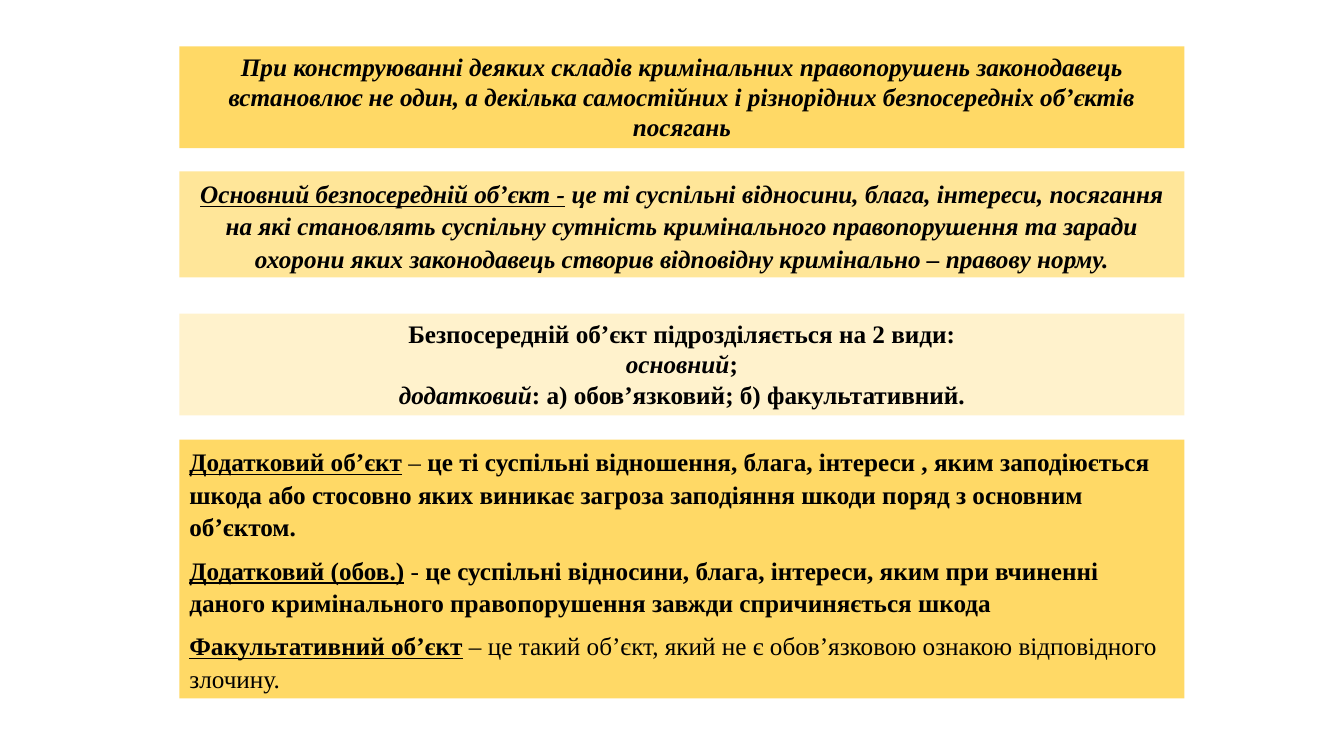
from dataclasses import dataclass

from pptx import Presentation
from pptx.dml.color import RGBColor
from pptx.enum.shapes import MSO_SHAPE
from pptx.enum.text import MSO_ANCHOR, MSO_AUTO_SIZE, PP_ALIGN
from pptx.slide import Slide
from pptx.util import Pt

COLORS = {
    "gold": "FFD966",
    "light_gold": "FFE699",
    "cream": "FFF2CC",
    "text": "000000",
}
FONT_NAME = "Times New Roman"
FONT_SIZE = 18
PANEL_LEFT = 128.2
PANEL_WIDTH = 717.8


@dataclass(frozen=True)
class Span:
    text: str
    bold: bool = True
    italic: bool = False
    underline: bool = False


@dataclass(frozen=True)
class Panel:
    top: float
    height: float
    color: str
    paragraphs: list[list[Span]]
    centered: bool = True
    spaced: bool = False


def definition(term: str, dash: str, meaning: str, bold: bool = True) -> list[Span]:
    """Underlined term, a plain dash and its meaning."""
    return [
        Span(term, underline=True),
        Span(" "),
        Span(f"{dash} ", bold=False),
        Span(meaning, bold=bold),
    ]


PANELS = [
    # Introduction
    Panel(33.1, 72.7, "gold", [[
        Span("При конструюванні деяких складів кримінальних правопорушень "
             "законодавець встановлює не один, а декілька самостійних і "
             "різнорідних безпосередніх об’єктів посягань", italic=True),
    ]]),
    # Main object
    Panel(122.4, 75.8, "light_gold", [[
        Span("Основний безпосередній об’єкт -", italic=True, underline=True),
        Span(" це ті суспільні відносини, блага, інтереси, посягання на які "
             "становлять суспільну сутність кримінального правопорушення та "
             "заради охорони яких законодавець створив відповідну "
             "кримінально – правову норму.", italic=True),
    ]], spaced=True),
    # Kinds of object
    Panel(224, 72.7, "cream", [
        [Span("Безпосередній об’єкт підрозділяється на 2 види:")],
        [Span("основний", italic=True), Span(";")],
        [Span("додатковий", italic=True),
         Span(": а) обов’язковий; б) факультативний.")],
    ]),
    # Additional objects
    Panel(314, 185, "gold", [
        definition("Додатковий об’єкт", "–",
                   "це ті суспільні відношення, блага, інтереси , яким "
                   "заподіюється шкода або стосовно яких виникає загроза "
                   "заподіяння шкоди поряд з основним об’єктом."),
        definition("Додатковий (обов.)", "-",
                   "це суспільні відносини, блага, інтереси, яким при вчиненні "
                   "даного кримінального правопорушення завжди спричиняється "
                   "шкода"),
        definition("Факультативний об’єкт", "–",
                   "це такий об’єкт, який не є обов’язковою ознакою "
                   "відповідного злочину.", bold=False),
    ], centered=False, spaced=True),
]


def draw_panel(slide: Slide, panel: Panel) -> None:
    shape = slide.shapes.add_shape(
        MSO_SHAPE.RECTANGLE,
        Pt(PANEL_LEFT), Pt(panel.top), Pt(PANEL_WIDTH), Pt(panel.height),
    )
    shape.shadow.inherit = False
    shape.fill.solid()
    shape.fill.fore_color.rgb = RGBColor.from_string(COLORS[panel.color])
    shape.line.fill.background()

    text_frame = shape.text_frame
    text_frame.word_wrap = True
    text_frame.auto_size = MSO_AUTO_SIZE.SHAPE_TO_FIT_TEXT
    text_frame.vertical_anchor = MSO_ANCHOR.TOP
    text_frame.text = "\n".join(
        "".join(span.text for span in spans) for spans in panel.paragraphs
    )
    for paragraph, spans in zip(text_frame.paragraphs, panel.paragraphs):
        paragraph.alignment = PP_ALIGN.CENTER if panel.centered else PP_ALIGN.LEFT
        if panel.spaced:
            paragraph.line_spacing = 1.07
            paragraph.space_after = Pt(8)
        # Split the line into its differently styled runs
        paragraph.clear()
        for span in spans:
            run = paragraph.add_run()
            run.text = span.text
            run.font.name = FONT_NAME
            run.font.size = Pt(FONT_SIZE)
            run.font.color.rgb = RGBColor.from_string(COLORS["text"])
            run.font.bold = span.bold
            run.font.italic = span.italic
            run.font.underline = span.underline


def main() -> None:
    presentation = Presentation()
    presentation.slide_width = Pt(960)
    presentation.slide_height = Pt(540)
    slide = presentation.slides.add_slide(presentation.slide_layouts[6])
    for panel in PANELS:
        draw_panel(slide, panel)
    presentation.save("out.pptx")


if __name__ == "__main__":
    main()
